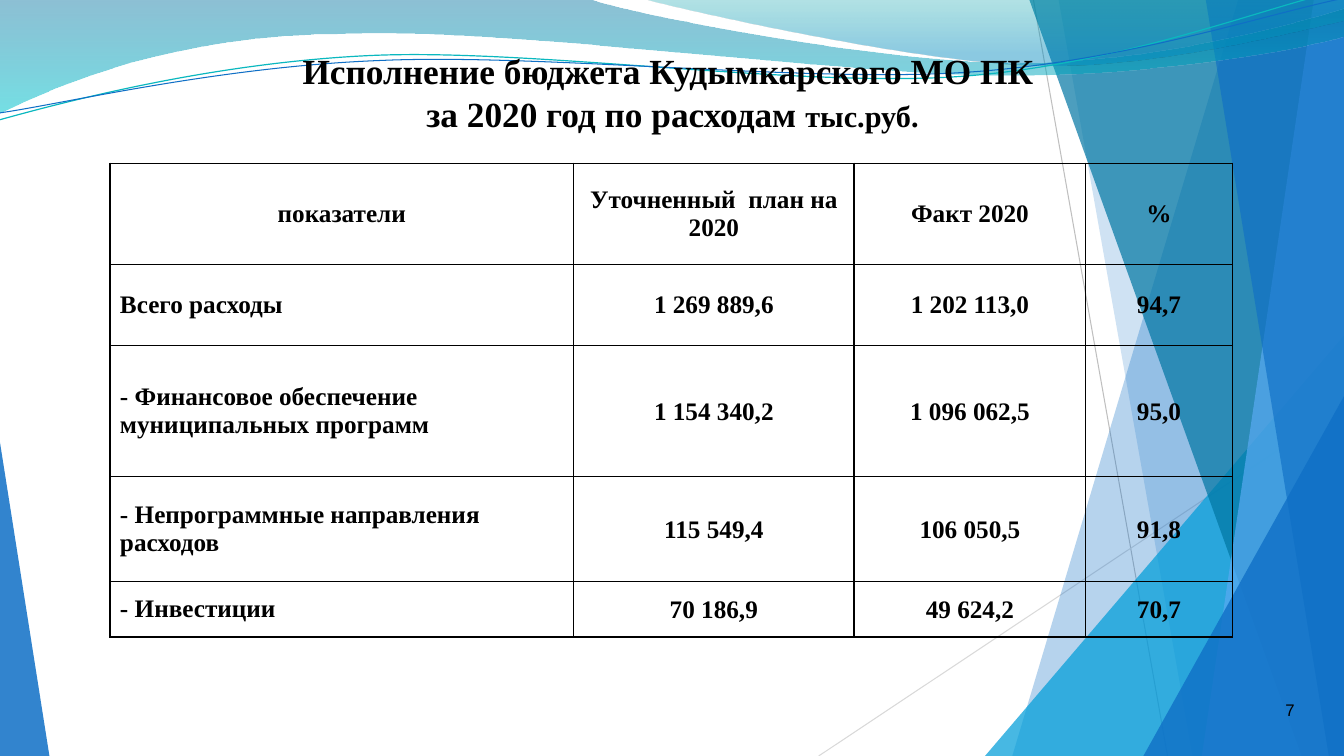
from dataclasses import dataclass

from pptx import Presentation
from pptx import util as u
from pptx.dml.color import RGBColor
from pptx.enum import shapes, text
from pptx.oxml import parse_xml
from pptx.oxml.ns import nsdecls, qn
from lxml import etree

Inches, Pt = u.Inches, u.Pt
ALIGN, MIDDLE = text.PP_ALIGN, text.MSO_ANCHOR.MIDDLE


@dataclass(frozen=True)
class Theme:
    ink: str = "000000"
    blue: str = "0F6FC6"
    sky: str = "009DD9"
    teal: str = "0076A3"
    light_blue: str = "59AAF2"
    aqua: str = "0AB8BF"
    ray_dark: str = "BFBFBF"
    ray_light: str = "D9D9D9"
    # Gradient stops: position, colour, opacity in percent
    left_wave: tuple = ((0, "0074A1", 45), (1, "00C6CF", 55))
    right_wave: tuple = ((0, "00A1A9", 30), (0.8, "008BBF", 45))
    serif: str = "Times New Roman"
    sans: str = "Arial"
    title: float = 25.2
    unit: float = 21.6
    body: float = 18
    number: float = 12


THEME = Theme()
WIDTH, HEIGHT = 13.33, 7.5

# Facets: corner points, colour, opacity in percent
BACK_FACETS = [
    ([(12.28, 0), (WIDTH, 0), (WIDTH, HEIGHT), (10.04, HEIGHT)], THEME.blue, 30),
    ([(10.5, 0), (WIDTH, 0), (WIDTH, HEIGHT), (11.83, HEIGHT)], THEME.blue, 20),
]
FRONT_FACETS = [
    ([(10.21, 0), (WIDTH, 0), (WIDTH, HEIGHT), (12.91, HEIGHT)], THEME.teal, 70),
    ([(13.03, 0), (WIDTH, 0), (WIDTH, HEIGHT), (11.92, HEIGHT)], THEME.light_blue, 70),
    ([(11.96, 0), (WIDTH, 0), (WIDTH, HEIGHT), (13.18, HEIGHT)], THEME.blue, 65),
]

# Waves: a pair is a straight step, six numbers are a Bezier step
LEFT_WAVE = [(0, 0), (5.87, 0), (6.34, 0.17, 8.85, 0.63, 10.11, 0.63),
             (11.38, 0.63, 12.78, 0.26, 13.33, 0.09), (13.35, 0.36),
             (13.11, 0.44, 11.6, 0.76, 9.94, 0.75), (8.29, 0.75, 5.09, 0.28, 3.43, 0.34),
             (1.72, 0.35, 0.61, 0.83, -0.01, 1.13)]
RIGHT_WAVE = [(6.39, 0), (6.79, 0.11, 9.09, 0.62, 10.25, 0.65),
              (11.41, 0.69, 12.82, 0.32, 13.33, 0.21), (13.33, 0)]
AQUA_CREST = [(-0.01, 1.19), (0.64, 1.01, 2.11, 0.62, 3.69, 0.55),
              (5.27, 0.48, 7.9, 0.87, 9.5, 0.76), (11.1, 0.65, 12.52, 0.08, 13.31, -0.1)]
BLUE_CREST = [(0, 1.12), (0.63, 1.03, 2.18, 0.66, 3.78, 0.6),
              (5.37, 0.53, 7.96, 0.82, 9.55, 0.72), (11.15, 0.62, 12.55, 0.14, 13.34, -0.02)]

COLUMNS = [4.6, 2.78, 2.3, 1.45]
ROWS = [1, 0.81, 1.3, 1.04, 0.55]
BUDGET = [
    ("показатели", "Уточненный  план на 2020", "Факт 2020", "%"),
    ("Всего расходы", "1 269 889,6", "1 202 113,0", "94,7"),
    ("- Финансовое обеспечение муниципальных программ", "1 154 340,2", "1 096 062,5", "95,0"),
    ("- Непрограммные направления расходов", "115 549,4", "106 050,5", "91,8"),
    ("- Инвестиции", "70 186,9", "49 624,2", "70,7"),
]


def set_opacity(color_holder, percent):
    color = next(color_holder.iter(qn("a:srgbClr")))
    etree.SubElement(color, qn("a:alpha")).set("val", str(percent * 1000))


def paint(shape, color, opacity):
    shape.shadow.inherit = False
    shape.line.fill.background()
    shape.fill.solid()
    shape.fill.fore_color.rgb = RGBColor.from_string(color)
    set_opacity(shape._element.spPr.find(qn("a:solidFill")), opacity)


def paint_gradient(shape, stops):
    shape.shadow.inherit = False
    shape.line.fill.background()
    shape.fill.gradient()
    shape.fill.gradient_angle = 270
    holders = shape._element.spPr.iter(qn("a:gs"))
    for stop, holder, (position, color, opacity) in zip(
            shape.fill.gradient_stops, holders, stops):
        stop.position = position
        stop.color.rgb = RGBColor.from_string(color)
        set_opacity(holder, opacity)


def add_outline(slide, steps, close=True):
    """Draw straight segments, then bend those that carry control points."""
    ends = [(Inches(step[-2]), Inches(step[-1])) for step in steps]
    builder = slide.shapes.build_freeform(*ends[0])
    builder.add_line_segments(ends[1:], close=close)
    outline = builder.convert_to_shape()
    segments = list(outline._element.iter(qn("a:lnTo")))
    for segment, step in zip(segments, steps[1:]):
        if len(step) == 6:
            curve = etree.Element(qn("a:cubicBezTo"))
            for x, y in zip(step[::2], step[1::2]):
                point = etree.SubElement(curve, qn("a:pt"))
                point.set("x", str(Inches(x) - outline.left))
                point.set("y", str(Inches(y) - outline.top))
            segment.getparent().replace(segment, curve)
    return outline


def add_crest(slide, steps, color, width):
    crest = add_outline(slide, steps, close=False)
    crest.shadow.inherit = False
    crest.fill.background()
    crest.line.color.rgb = RGBColor.from_string(color)
    crest.line.width = Pt(width)


def add_ray(slide, start, end, color):
    ray = slide.shapes.add_connector(shapes.MSO_CONNECTOR.STRAIGHT,
                                     *map(Inches, start + end))
    ray.line.color.rgb = RGBColor.from_string(color)
    ray.line.width = Pt(0.75)
    etree.SubElement(ray._element.spPr, qn("a:effectLst"))


def add_corner(slide, box, apex, color, opacity):
    corner = slide.shapes.add_shape(shapes.MSO_SHAPE.ISOSCELES_TRIANGLE, *map(Inches, box))
    corner.adjustments[0] = apex
    paint(corner, color, opacity)


def add_facets(slide, facets):
    for corners, color, opacity in facets:
        paint(add_outline(slide, corners), color, opacity)


def style(paragraph, size, align, name=THEME.serif, bold=True):
    paragraph.alignment = align
    font = paragraph.font
    font.name, font.size, font.bold = name, Pt(size), bold
    font.color.rgb = RGBColor.from_string(THEME.ink)


def add_backdrop(slide):
    add_ray(slide, (10.25, 0), (11.58, HEIGHT), THEME.ray_dark)
    add_ray(slide, (WIDTH, 4.03), (8.12, HEIGHT), THEME.ray_light)
    add_facets(slide, BACK_FACETS)
    add_corner(slide, (9.77, 3.33, 3.56, 4.17), 1, THEME.sky, 72)
    add_facets(slide, FRONT_FACETS)
    add_corner(slide, (11.34, 3.93, 1.99, 3.57), 1, THEME.blue, 80)
    add_corner(slide, (0, 4.39, 0.49, 3.11), 0, THEME.blue, 85)
    paint_gradient(add_outline(slide, LEFT_WAVE), THEME.left_wave)
    paint_gradient(add_outline(slide, RIGHT_WAVE), THEME.right_wave)
    add_crest(slide, AQUA_CREST, THEME.aqua, 0.85)
    add_crest(slide, BLUE_CREST, THEME.blue, 0.75)
    # The backdrop belongs to the layout, behind its placeholders
    decor = [part for part in slide.shapes if not part.is_placeholder]
    for index, part in enumerate(decor, start=2):
        slide.slide_layout.shapes._spTree.insert(index, part._element)


def fill_title(slide):
    title = slide.shapes.title
    title.left, title.top, title.width, title.height = map(Inches, (2.17, 0.44, 9, 0.94))
    frame = title.text_frame
    frame.auto_size, frame.vertical_anchor = text.MSO_AUTO_SIZE.NONE, MIDDLE
    heading = frame.paragraphs[0]
    heading.text = "Исполнение бюджета Кудымкарского МО ПК \vза 2020 год по расходам "
    style(heading, THEME.title, ALIGN.CENTER)
    unit = heading.add_run()
    unit.text = "тыс.руб."
    unit.font.size = Pt(THEME.unit)


def add_page_number(slide):
    page = slide.shapes.add_textbox(*map(Inches, (12.19, 6.84, 0.75, 0.4))).text_frame
    page.word_wrap, page.vertical_anchor = True, MIDDLE
    page.text = "7"
    style(page.paragraphs[0], THEME.number, ALIGN.RIGHT, THEME.sans, False)


def format_cell(cell, words, is_figure, align):
    cell.text = words
    style(cell.text_frame.paragraphs[0], THEME.body, align)
    cell.vertical_anchor = MIDDLE
    cell.margin_left = cell.margin_right = Inches(0.01 if is_figure else 0.1)
    cell.margin_top = Inches(0.01 if is_figure else 0.05)
    cell.margin_bottom = Inches(0 if is_figure else 0.05)
    for side in "LRTB":
        cell._tc.get_or_add_tcPr().append(parse_xml(
            f'<a:ln{side} {nsdecls("a")} w="{Pt(1)}"><a:solidFill>'
            f'<a:srgbClr val="{THEME.ink}"/></a:solidFill></a:ln{side}>'))
    cell.fill.background()


def add_budget_table(slide):
    box = map(Inches, (1.09, 1.62, sum(COLUMNS), sum(ROWS)))
    table = slide.shapes.add_table(len(ROWS), len(COLUMNS), *box).table
    table.first_row = table.horz_banding = False
    for column, width in zip(table.columns, COLUMNS):
        column.width = Inches(width)
    for r, (row, height) in enumerate(zip(table.rows, ROWS)):
        row.height = Inches(height)
        for c, cell in enumerate(row.cells):
            align = ALIGN.LEFT if r and not c else ALIGN.CENTER
            format_cell(cell, BUDGET[r][c], r > 0 and c > 0, align)


def main():
    deck = Presentation()
    deck.slide_width, deck.slide_height = Inches(WIDTH), Inches(HEIGHT)
    slide = deck.slides.add_slide(deck.slide_layouts[5])
    add_backdrop(slide)
    fill_title(slide)
    add_page_number(slide)
    add_budget_table(slide)
    deck.save("out.pptx")


if __name__ == "__main__":
    main()
